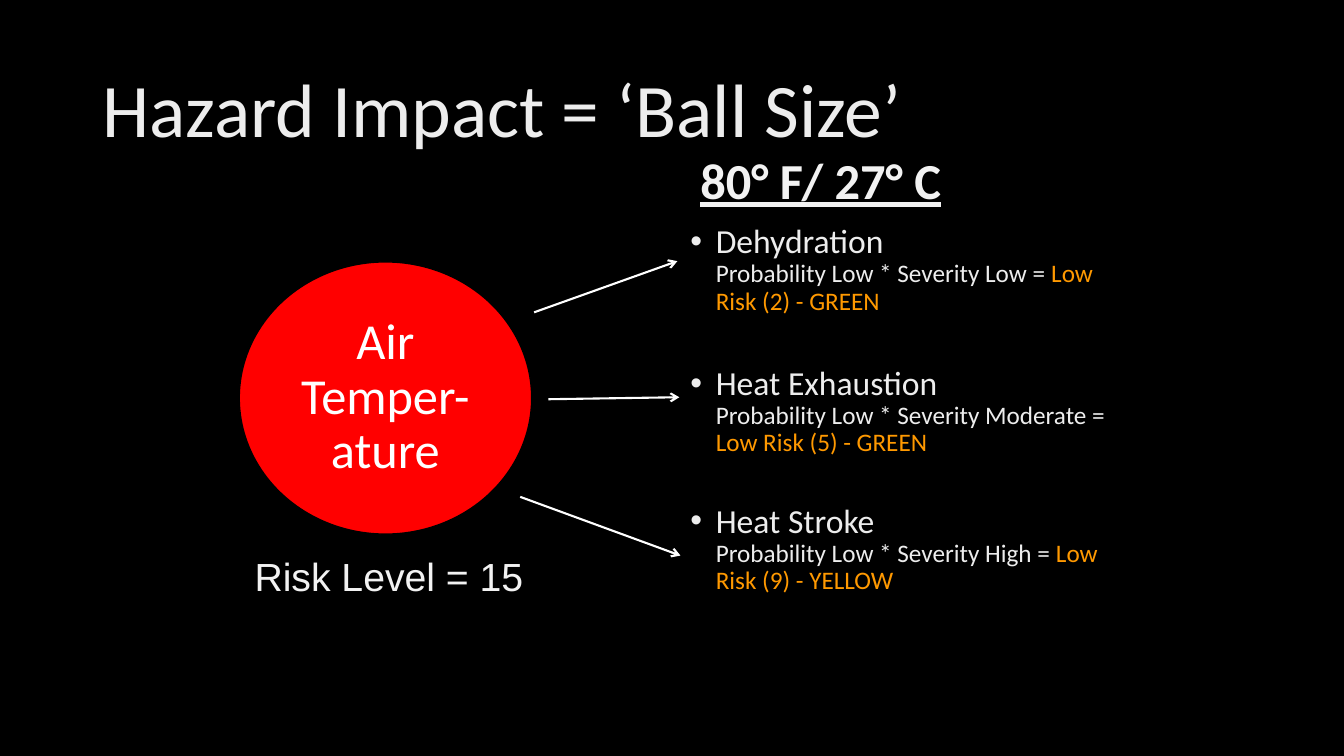
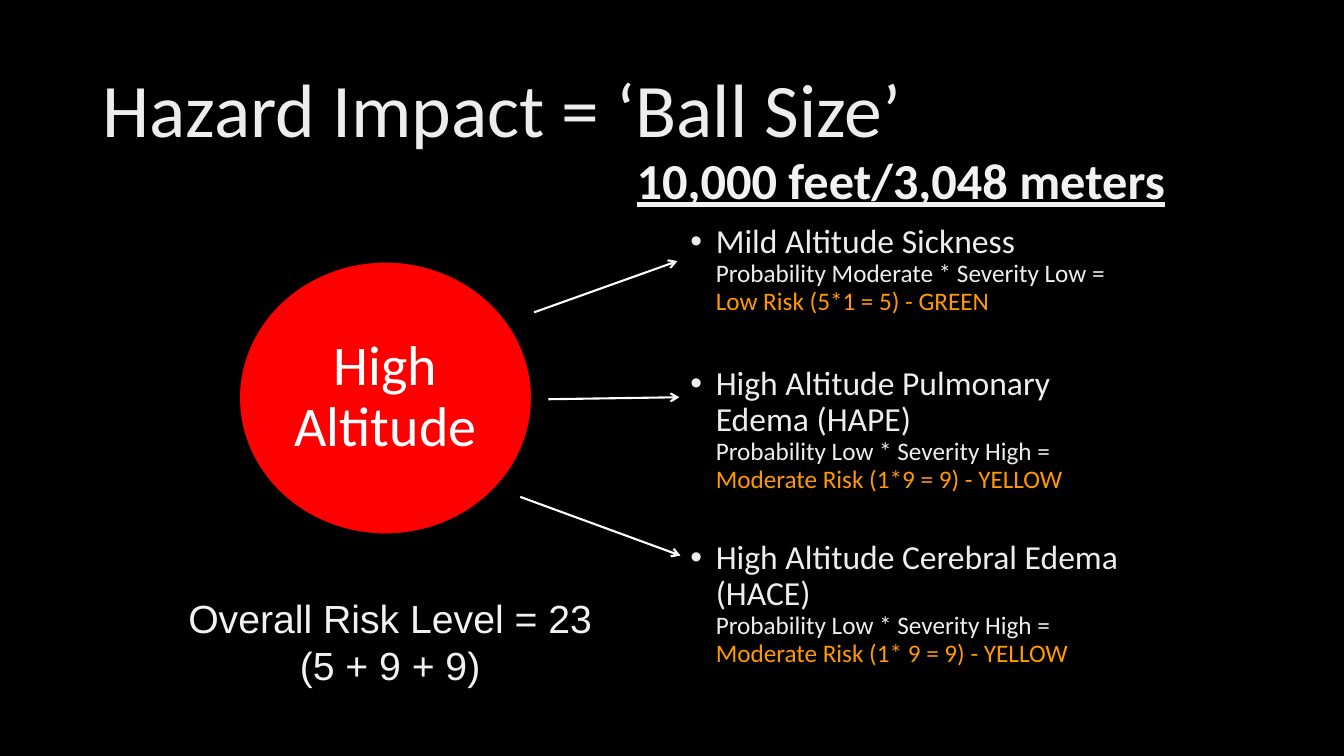
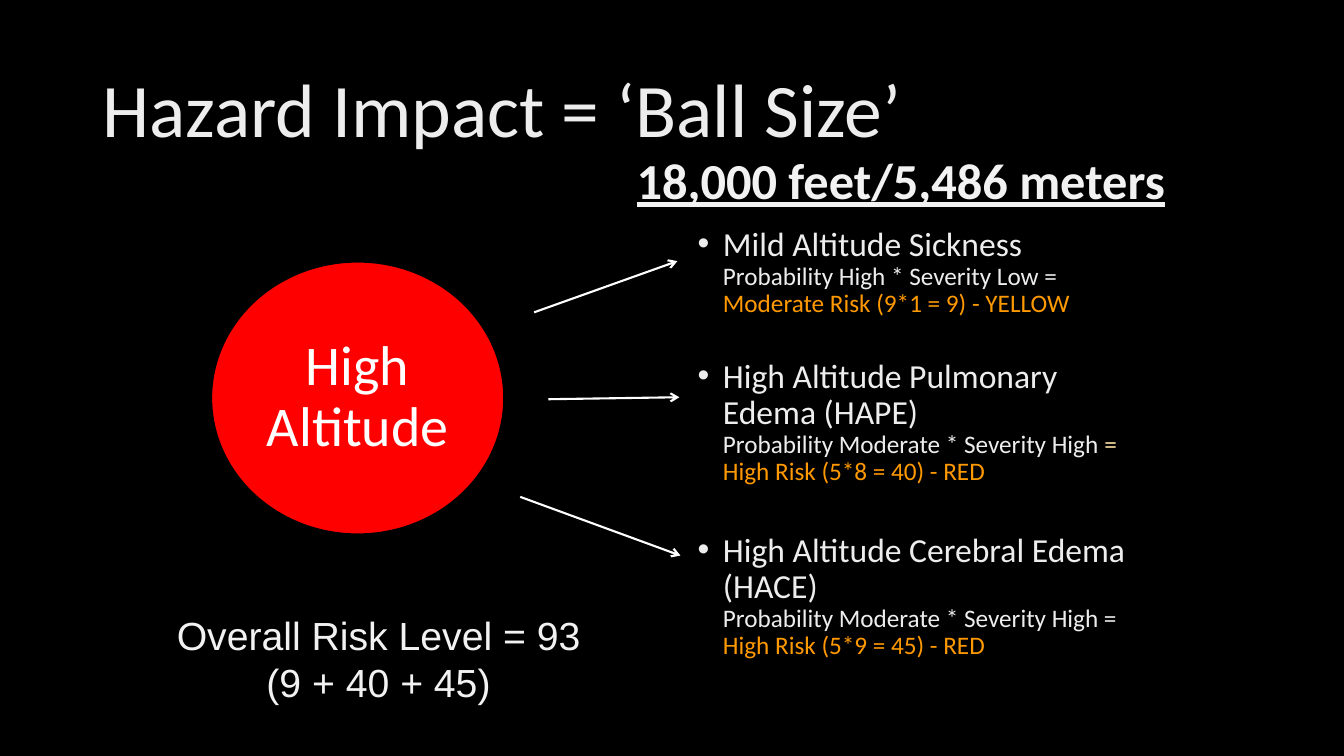
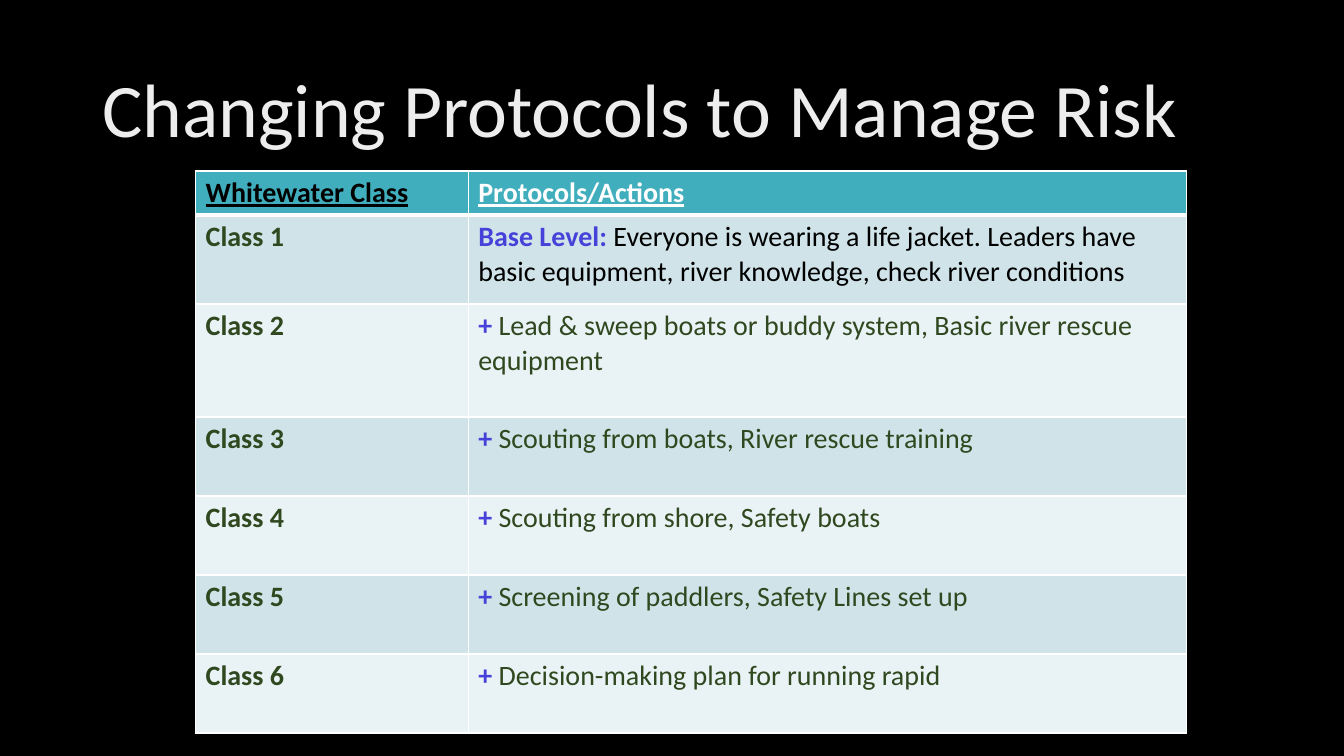
from dataclasses import dataclass

from lxml import etree
from pptx import Presentation
from pptx import util as u
from pptx.dml.color import RGBColor
from pptx.enum import shapes, text
from pptx.oxml import ns

Cm, Pt = u.Cm, u.Pt

COLORS = {
    "background": "000000",
    "title": "EDEDED",
    "label": "F2F2F2",
    "white": "FFFFFF",
    "black": "000000",
    "ball": "FF0000",
    "risk": "FF9900",
    "pale": "FEE0A4",
    "header": "41AEBD",
    "band_dark": "CFE3E8",
    "band_light": "E9F2F4",
    "class": "30481F",
    "plus": "4841D9",
}
BODY_FONT, LABEL_FONT = "Calibri", "Arial"
ALIGN = text.PP_ALIGN
BALL_TOP, BALL_WIDTH, BALL_HEIGHT = 6.6, 7.37, 6.86
# Start and end of each arrow, in centimetres
ARROWS = [
    (13.46, 7.87, 17.07, 6.58),
    (13.82, 10.06, 17.12, 10.01),
    (13.11, 12.52, 17.15, 14.0),
]


@dataclass
class Span:
    words: str
    size: float
    color: str
    bold: bool = False
    underline: bool = False
    font: str = BODY_FONT


@dataclass
class Hazard:
    name: str
    factors: str
    risk: str
    space_before: float = 0
    equals_color: str = "title"


@dataclass
class BallPage:
    ball_words: str
    ball_size: float
    ball_left: float
    heading: str
    heading_left: float
    heading_align: ALIGN
    level_lines: list[str]
    level_center: float
    level_top: float
    list_left: float
    list_top: float
    hazards: list[Hazard]


# ---- Shared drawing ----
def rgb(name: str) -> RGBColor:
    return RGBColor.from_string(COLORS[name])


def add_spans(para, spans: list[Span]) -> None:
    for span in spans:
        run = para.add_run()
        run.text = span.words
        run.font.name = span.font
        run.font.size = Pt(span.size)
        run.font.bold = span.bold
        run.font.underline = span.underline
        run.font.color.rgb = rgb(span.color)


def add_box(page, left: float, top: float, width: float, height: float):
    box = page.shapes.add_textbox(Cm(left), Cm(top), Cm(width), Cm(height))
    box.text_frame.word_wrap = True
    return box.text_frame


def add_page(deck, title: str):
    page = deck.slides.add_slide(deck.slide_layouts[6])
    frame = add_box(page, 2.33, 1.01, 29.21, 3.68)
    frame.vertical_anchor = text.MSO_ANCHOR.MIDDLE
    para = frame.paragraphs[0]
    para.line_spacing = 0.9
    add_spans(para, [Span(title, 54, "title")])
    return page


# ---- Ball pages ----
def add_arrow(page, start_x: float, start_y: float, end_x: float, end_y: float) -> None:
    arrow = page.shapes.add_connector(
        shapes.MSO_CONNECTOR.STRAIGHT, Cm(start_x), Cm(start_y), Cm(end_x), Cm(end_y))
    arrow.line.color.rgb = rgb("white")
    arrow.line.width = Pt(1.5)
    etree.SubElement(arrow.line._get_or_add_ln(), ns.qn("a:tailEnd"), type="arrow")
    etree.SubElement(arrow._element.spPr, ns.qn("a:effectLst"))


def add_ball(page, words: str, size: float, left: float) -> None:
    ball = page.shapes.add_shape(
        shapes.MSO_SHAPE.OVAL, Cm(left), Cm(BALL_TOP), Cm(BALL_WIDTH), Cm(BALL_HEIGHT))
    ball.shadow.inherit = False
    ball.fill.solid()
    ball.fill.fore_color.rgb = rgb("ball")
    ball.line.color.rgb = rgb("black")
    ball.line.width = Pt(1)
    frame = ball.text_frame
    frame.word_wrap = True
    frame.vertical_anchor = text.MSO_ANCHOR.MIDDLE
    frame.margin_left = frame.margin_right = Cm(0.18)
    frame.margin_top = frame.margin_bottom = Cm(0.18)
    para = frame.paragraphs[0]
    para.alignment = ALIGN.CENTER
    para.line_spacing = 0.9
    add_spans(para, [Span(words, size, "white")])


def add_bullet(para) -> None:
    props = para._p.get_or_add_pPr()
    props.set("marL", str(Cm(0.64)))
    props.set("indent", str(Cm(-0.64)))
    etree.SubElement(props, ns.qn("a:buFont"), typeface="Arial")
    etree.SubElement(props, ns.qn("a:buChar"), char="•")


def add_hazards(page, left: float, top: float, hazards: list[Hazard]) -> None:
    frame = add_box(page, left, top, 11.46, 12.4)
    for index, hazard in enumerate(hazards):
        para = frame.add_paragraph() if index else frame.paragraphs[0]
        add_bullet(para)
        para.line_spacing = 0.9
        para.space_before = Pt(hazard.space_before)
        add_spans(para, [Span(hazard.name, 24, "title")])
        para.add_line_break()
        add_spans(para, [
            Span(hazard.factors + " ", 18, "title"),
            Span("= ", 18, hazard.equals_color),
            Span(hazard.risk, 18, "risk"),
        ])


def add_ball_page(deck, content: BallPage) -> None:
    page = add_page(deck, "Hazard Impact = ‘Ball Size’")
    add_hazards(page, content.list_left, content.list_top, content.hazards)
    for ends in ARROWS:
        add_arrow(page, *ends)

    # Heading, ending at a common right edge
    frame = add_box(page, content.heading_left, 3.63, 29.62 - content.heading_left, 1.8)
    para = frame.paragraphs[0]
    para.alignment = content.heading_align
    add_spans(para, [Span(content.heading, 36, "label", bold=True, underline=True)])

    # Risk level
    width = 11.4
    frame = add_box(page, content.level_center - width / 2, content.level_top, width, 2.64)
    para = frame.paragraphs[0]
    para.alignment = ALIGN.CENTER
    for index, line in enumerate(content.level_lines):
        if index:
            para.add_line_break()
        add_spans(para, [Span(line, 28, "label", font=LABEL_FONT)])

    add_ball(page, content.ball_words, content.ball_size, content.ball_left)


# ---- Protocol table ----
def style_cell(cell, fill: str, bottom_width: float) -> None:
    props = cell._tc.get_or_add_tcPr()
    for side in ("lnL", "lnR", "lnT", "lnB"):
        width = bottom_width if side == "lnB" else 1
        line = etree.SubElement(props, ns.qn(f"a:{side}"), w=str(Pt(width)))
        solid = etree.SubElement(line, ns.qn("a:solidFill"))
        etree.SubElement(solid, ns.qn("a:srgbClr"), val=COLORS["white"])
    cell.fill.solid()
    cell.fill.fore_color.rgb = rgb(fill)


def add_protocol_page(deck, protocols: list[str]) -> None:
    page = add_page(deck, "Changing Protocols to Manage Risk")
    rows = [([Span("Whitewater Class", 20, "black", True, True)],
             [Span("Protocols/Actions", 20, "white", True, True)])]
    for level, protocol in enumerate(protocols, 1):
        lead, color = ("Base Level:", "black") if level == 1 else ("+", "class")
        rows.append(([Span(f"Class {level}", 20, "class", True)],
                     [Span(lead, 20, "plus", True), Span(" " + protocol, 20, color)]))

    heights = [1.11, 2.24, 2.85] + [1.99] * 4
    widths = [6.87, 18.11]
    table = page.shapes.add_table(
        len(rows), len(widths), Cm(4.93), Cm(4.31), Cm(sum(widths)), Cm(sum(heights))).table
    for column, width in zip(table.columns, widths):
        column.width = Cm(width)
    for index, (row, height) in enumerate(zip(rows, heights)):
        table.rows[index].height = Cm(height)
        fill = "header" if index == 0 else "band_dark" if index % 2 else "band_light"
        for position, spans in enumerate(row):
            cell = table.cell(index, position)
            style_cell(cell, fill, 1 if index else 3)
            add_spans(cell.text_frame.paragraphs[0], spans)


# ---- Content ----
HAPE = "High Altitude Pulmonary Edema (HAPE)"
HACE = "High Altitude Cerebral Edema (HACE)"
BALL_PAGES = [
    BallPage(
        "Air Temper-ature", 36, 6.03, "80° F/ 27° C", 17.4, ALIGN.LEFT,
        ["Risk Level = 15"], 9.8, 13.79, 17.15, 5.54, [
            Hazard("Dehydration", "Probability Low * Severity Low", "Low Risk (2) - GREEN"),
            Hazard("Heat Exhaustion", "Probability Low * Severity Moderate",
                   "Low Risk (5) - GREEN", 36.5),
            Hazard("Heat Stroke", "Probability Low * Severity High",
                   "Low Risk (9) - YELLOW", 33.5),
        ]),
    BallPage(
        "High Altitude", 40, 6.03, "10,000 feet/3,048 meters", 11.38, ALIGN.RIGHT,
        ["Overall Risk Level = 23", "(5 + 9 + 9)"], 9.83, 14.86, 17.15, 5.54, [
            Hazard("Mild Altitude Sickness", "Probability Moderate * Severity Low",
                   "Low Risk (5*1 = 5) - GREEN"),
            Hazard(HAPE, "Probability Low * Severity High",
                   "Moderate Risk (1*9 = 9) - YELLOW", 36.5),
            Hazard(HACE, "Probability Low * Severity High",
                   "Moderate Risk (1* 9 = 9) - YELLOW", 33.5),
        ]),
    BallPage(
        "High Altitude", 40, 5.33, "18,000 feet/5,486 meters", 11.56, ALIGN.RIGHT,
        ["Overall Risk Level = 93", "(9 + 40 + 45)"], 9.54, 15.29, 17.33, 5.6, [
            Hazard("Mild Altitude Sickness", "Probability High * Severity Low",
                   "Moderate Risk (9*1 = 9) - YELLOW"),
            Hazard(HAPE, "Probability Moderate * Severity High",
                   "High Risk (5*8 = 40) - RED", 29.5, "pale"),
            Hazard(HACE, "Probability Moderate * Severity High",
                   "High Risk (5*9 = 45) - RED", 33.5),
        ]),
]
PROTOCOLS = [
    "Everyone is wearing a life jacket. Leaders have basic equipment, "
    "river knowledge, check river conditions",
    "Lead & sweep boats or buddy system, Basic river rescue equipment",
    "Scouting from boats, River rescue training",
    "Scouting from shore, Safety boats",
    "Screening of paddlers, Safety Lines set up",
    "Decision-making plan for running rapid",
]


def main() -> None:
    deck = Presentation()
    deck.slide_width, deck.slide_height = Cm(33.87), Cm(19.05)
    background = deck.slide_master.background.fill
    background.solid()
    background.fore_color.rgb = rgb("background")
    for content in BALL_PAGES:
        add_ball_page(deck, content)
    add_protocol_page(deck, PROTOCOLS)
    deck.save("out.pptx")


if __name__ == "__main__":
    main()
